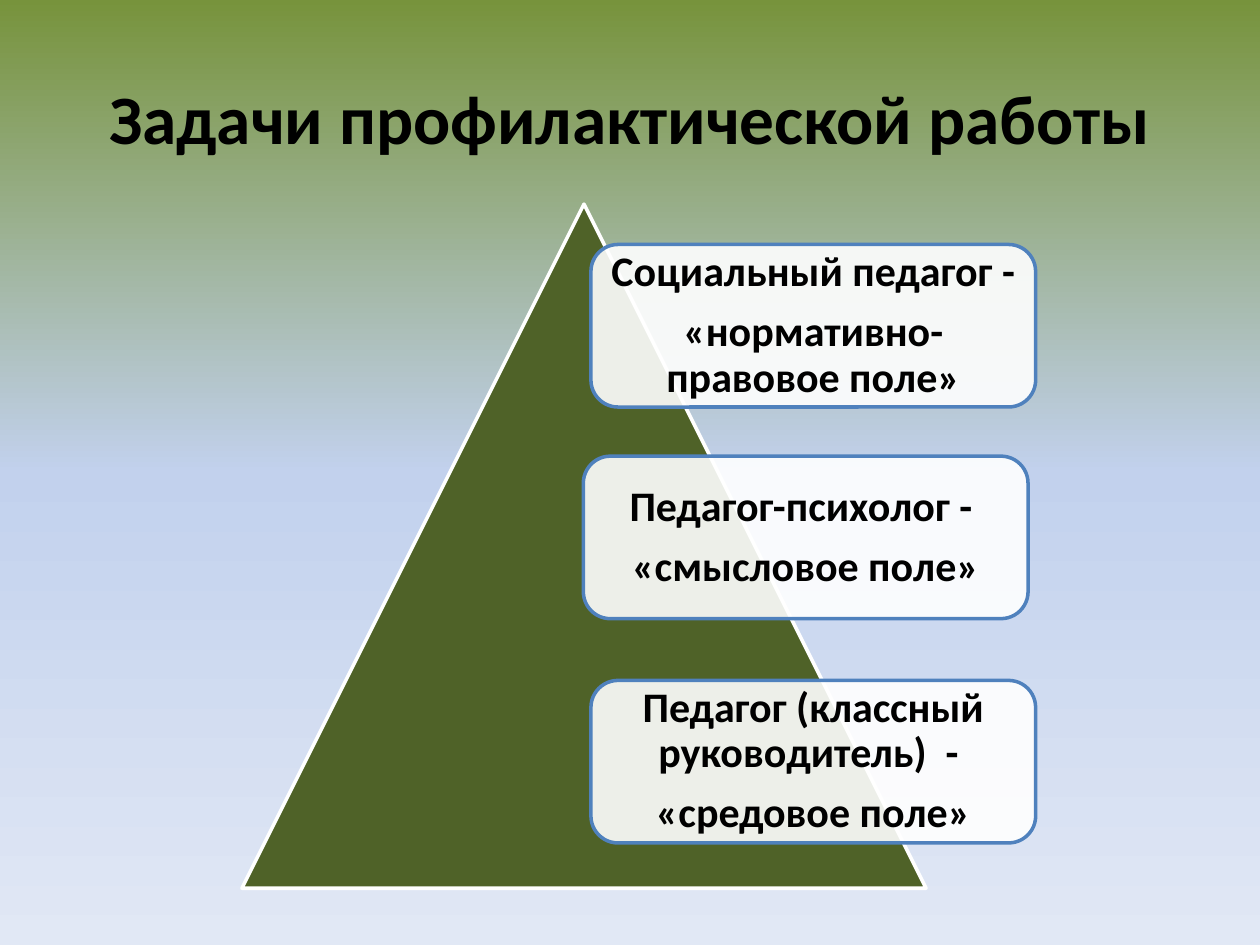
from copy import deepcopy

from lxml.etree import SubElement
from pptx import Presentation
from pptx.dml.color import RGBColor
from pptx.enum.shapes import MSO_SHAPE
from pptx.enum.text import MSO_ANCHOR, PP_ALIGN
from pptx.oxml.ns import qn
from pptx.util import Inches, Pt

BLACK = RGBColor(0x00, 0x00, 0x00)
WHITE = RGBColor(0xFF, 0xFF, 0xFF)
DARK_GREEN = RGBColor(0x4F, 0x62, 0x28)
BLUE = RGBColor(0x4F, 0x81, 0xBD)
BACKGROUND_STOPS = [
    (0, RGBColor(0x77, 0x93, 0x3C)),
    (0.5, RGBColor(0xC2, 0xD1, 0xED)),
    (1, RGBColor(0xE1, 0xE8, 0xF5)),
]

ROLES = [
    (4.69, 1.94, ["Социальный педагог - ", "«нормативно-правовое поле»"]),
    (4.63, 3.62, ["Педагог-психолог - ", "«смысловое поле»"]),
    (4.69, 5.4, ["Педагог (классный руководитель)  - ", "«средовое поле»"]),
]


def write_text(paragraph, text, size=24, line_spacing=None, space_after=None):
    paragraph.alignment = PP_ALIGN.CENTER
    paragraph.line_spacing = line_spacing
    paragraph.space_after = space_after
    run = paragraph.add_run()
    run.text = text
    run.font.name = "Calibri"
    run.font.size = Pt(size)
    run.font.bold = True
    run.font.color.rgb = BLACK


class SlideBuilder:
    line_width = Pt(2)
    inset = Inches(0.1)

    def __init__(self, slide):
        self.slide = slide

    def background(self, stops):
        fill = self.slide.background.fill
        fill.gradient()
        fill.gradient_angle = 270
        stop_list = next(self.slide.element.iter(qn("a:gsLst")))
        while len(stop_list) < len(stops):
            stop_list.append(deepcopy(stop_list[-1]))
        for stop, (position, color) in zip(fill.gradient_stops, stops):
            stop.position = position
            stop.color.rgb = color

    def title(self, text):
        title = self.slide.shapes.title
        title.left, title.top = Inches(0.5), Inches(0.3)
        title.width, title.height = Inches(9), Inches(1.25)
        title.text_frame.vertical_anchor = MSO_ANCHOR.MIDDLE
        write_text(title.text_frame.paragraphs[0], text, size=39.6)

    def shape(self, kind, left, top, width, height, fill, line):
        shape = self.slide.shapes.add_shape(
            kind, Inches(left), Inches(top), Inches(width), Inches(height)
        )
        shape.shadow.inherit = False
        shape.fill.solid()
        shape.fill.fore_color.rgb = fill
        shape.line.color.rgb = line
        shape.line.width = self.line_width
        return shape

    def pyramid(self, left, top, size):
        self.shape(MSO_SHAPE.ISOSCELES_TRIANGLE, left, top, size, size, DARK_GREEN, WHITE)

    def role_card(self, left, top, lines):
        card = self.shape(MSO_SHAPE.ROUNDED_RECTANGLE, left, top, 3.53, 1.29, WHITE, BLUE)
        color = card.fill._xPr.find(qn("a:solidFill"))[0]
        SubElement(color, qn("a:alpha")).set("val", "90000")
        frame = card.text_frame
        frame.word_wrap = True
        frame.vertical_anchor = MSO_ANCHOR.MIDDLE
        frame.margin_left = frame.margin_right = self.inset
        frame.margin_top = frame.margin_bottom = self.inset
        for index, text in enumerate(lines):
            paragraph = frame.add_paragraph() if index else frame.paragraphs[0]
            write_text(paragraph, text, line_spacing=0.9, space_after=Pt(8.4))


def main():
    presentation = Presentation()
    presentation.slide_width = Inches(10)
    presentation.slide_height = Inches(7.5)
    builder = SlideBuilder(presentation.slides.add_slide(presentation.slide_layouts[5]))
    builder.background(BACKGROUND_STOPS)
    builder.title("Задачи профилактической работы")
    builder.pyramid(1.92, 1.62, 5.43)
    for left, top, lines in ROLES:
        builder.role_card(left, top, lines)
    presentation.save("out.pptx")


if __name__ == "__main__":
    main()
